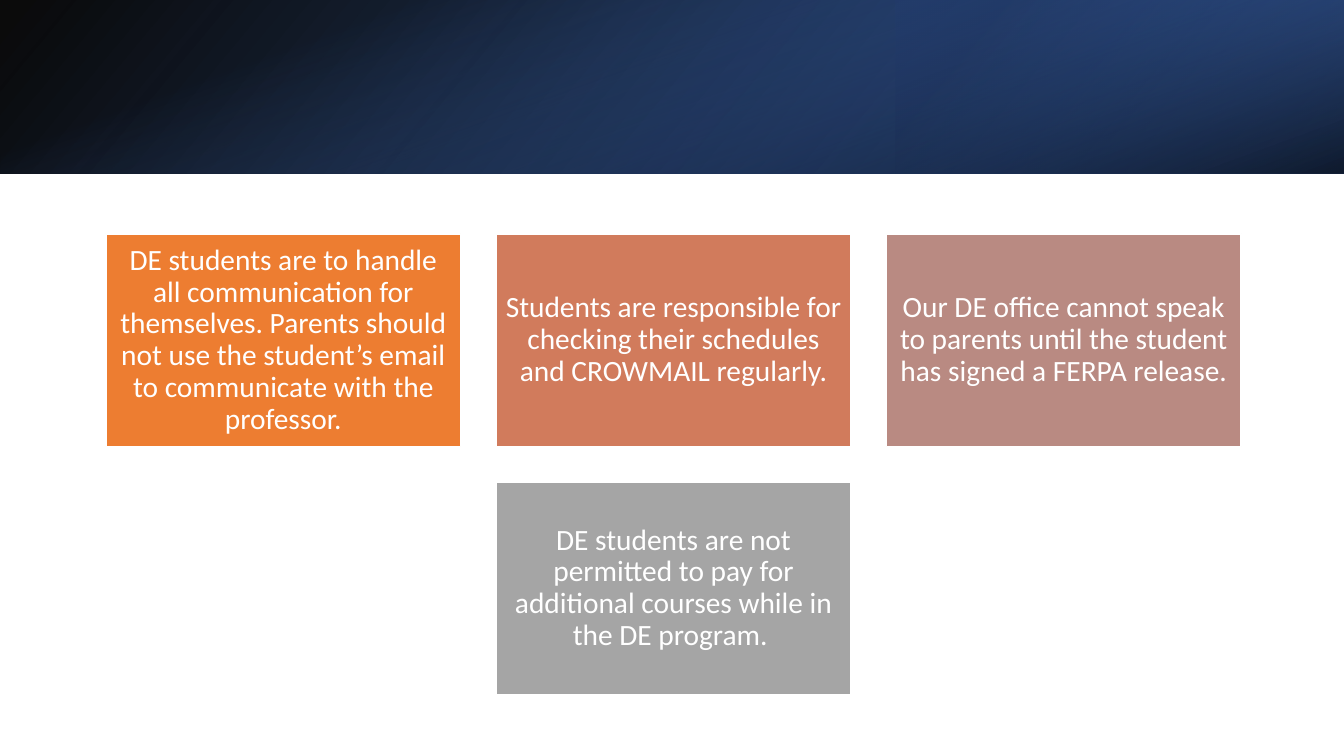
from lxml import etree
from pptx import Presentation
from pptx.dml.color import RGBColor
from pptx.enum.shapes import MSO_SHAPE
from pptx.enum.text import MSO_ANCHOR, PP_ALIGN
from pptx.oxml.ns import qn
from pptx.util import Inches, Pt

RECTANGLE = MSO_SHAPE.RECTANGLE
MIDDLE = MSO_ANCHOR.MIDDLE
CENTER = PP_ALIGN.CENTER

COLORS = {
    "white": "FFFFFF",
    "black": "000000",
    "deep_blue": "2F5597",
    "navy": "203864",
    "blue": "4472C4",
    "orange": "ED7D31",
    "coral": "D17B5C",
    "rose": "B98A82",
    "gray": "A5A5A5",
}

SLIDE_WIDTH, SLIDE_HEIGHT = 13.33, 7.5
BANNER_HEIGHT = 1.72
CARD_WIDTH, CARD_HEIGHT, CARD_GAP = 3.52, 2.11, 0.35
COLUMNS = 3

CARDS = [
    ("orange", "DE students are to handle all communication for themselves. "
               "Parents should not use the student’s email to communicate with the professor."),
    ("coral", "Students are responsible for checking their schedules and CROWMAIL regularly."),
    ("rose", "Our DE office cannot speak to parents until the student has signed a FERPA release."),
    ("gray", "DE students are not permitted to pay for additional courses while in the DE program. "),
]


def color(name):
    """Return the named colour."""
    return RGBColor.from_string(COLORS[name])


def add_rectangle(page, left, top, width, height):
    """Add a rectangle without shadow."""
    box = page.shapes.add_shape(
        RECTANGLE, Inches(left), Inches(top), Inches(width), Inches(height))
    box.shadow.inherit = False
    return box


def write_text(box, text, size=21, font="Calibri", ink="white", inset=0.09):
    """Write one centred paragraph into a box."""
    frame = box.text_frame
    frame.word_wrap = True
    frame.vertical_anchor = MIDDLE
    frame.margin_left = frame.margin_right = Inches(inset)
    frame.margin_top = frame.margin_bottom = Inches(inset)
    para = frame.paragraphs[0]
    para.alignment = CENTER
    para.line_spacing = 0.9
    span = para.add_run()
    span.text = text
    span.font.size = Pt(size)
    span.font.name = font
    span.font.color.rgb = color(ink)


def add_gradient(page, left, top, width, height, stops, angle, rotation=0, flip=False):
    """Add a translucent gradient layer; angle runs clockwise in degrees."""
    layer = add_rectangle(page, left, top, width, height)
    layer.rotation = rotation
    layer.line.fill.background()
    layer.fill.gradient()
    layer.fill.gradient_angle = 360 - angle
    for stop, (position, name, _) in zip(layer.fill.gradient_stops, stops):
        stop.position = position / 100
        stop.color.rgb = color(name)
    properties = layer._element.spPr
    for tint, (_, _, opacity) in zip(properties.iter(qn("a:srgbClr")), stops):
        etree.SubElement(tint, qn("a:alpha")).set("val", str(opacity * 1000))
    if flip:
        properties.find(qn("a:xfrm")).set("flipH", "1")


def add_banner(page, left, top, width, height):
    """Stack the three gradient layers of the banner."""
    add_gradient(page, left, top, width, height,
                 [(0, "black", 96), (100, "deep_blue", 100)], 140, flip=True)
    add_gradient(page, left + width * 2 / 3, top, width / 3, height,
                 [(19, "navy", 68), (100, "blue", 79)], 320, rotation=180, flip=True)
    shift = (width - height) / 2
    add_gradient(page, left + shift, top - shift, height, width,
                 [(23, "blue", 0), (99, "black", 74)], 340, rotation=90)


def add_cards(page, left, top):
    """Lay out the cards in rows, centring a short last row."""
    pitch = CARD_WIDTH + CARD_GAP
    for index, (fill, text) in enumerate(CARDS):
        row, column = divmod(index, COLUMNS)
        in_row = min(COLUMNS, len(CARDS) - row * COLUMNS)
        offset = column + (COLUMNS - in_row) / 2
        card = add_rectangle(page, left + offset * pitch,
                             top + row * (CARD_HEIGHT + CARD_GAP), CARD_WIDTH, CARD_HEIGHT)
        card.fill.solid()
        card.fill.fore_color.rgb = color(fill)
        card.line.color.rgb = color("white")
        card.line.width = Pt(1)
        write_text(card, text)


def main():
    """Build and save the slide."""
    deck = Presentation()
    deck.slide_width = Inches(SLIDE_WIDTH)
    deck.slide_height = Inches(SLIDE_HEIGHT)
    page = deck.slides.add_slide(deck.slide_layouts[6])
    page.background.fill.solid()
    page.background.fill.fore_color.rgb = color("white")
    add_banner(page, 0, 0, SLIDE_WIDTH, BANNER_HEIGHT)
    add_cards(page, 1.05, 2.32)
    deck.save("out.pptx")


if __name__ == "__main__":
    main()
